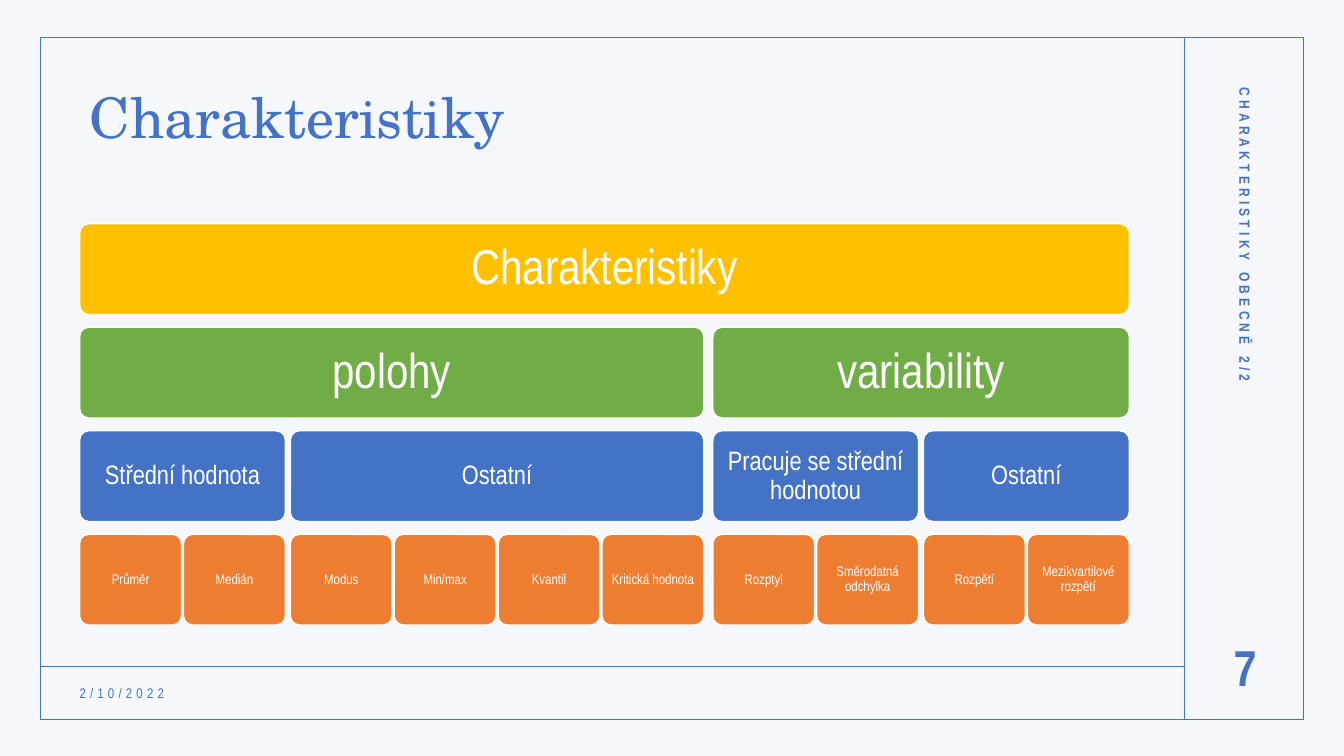
from lxml.etree import SubElement
from pptx import Presentation
from pptx.dml.color import RGBColor
from pptx.enum.shapes import MSO_CONNECTOR as Connector, MSO_SHAPE as Shape
from pptx.enum.text import MSO_ANCHOR as Anchor, PP_ALIGN as Align
from pptx.oxml.ns import qn
from pptx.util import Inches, Pt

BLUE = "4472C4"
WHITE = "FFFFFF"
BODY_FONT = "Arial Narrow"
TITLE_FONT = "TeX Gyre Schola"

LEVELS = [
    {"fill": "FFC000", "size": 35, "inset": 0.15, "gap": 0.09},
    {"fill": "70AD47", "size": 35, "inset": 0.15, "gap": 0.05},
    {"fill": BLUE, "size": 19, "inset": 0.08, "gap": 0.02},
    {"fill": "ED7D31", "size": 10, "inset": 0.04, "gap": 0},
]
TILE_HEIGHT = 0.9
ROW_STEP = 1.027

TREE = ("Charakteristiky", [
    ("polohy", [
        ("Střední hodnota", [("Průměr", []), ("Medián", [])]),
        ("Ostatní", [("Modus", []), ("Min/max", []), ("Kvantil", []),
                     ("Kritická hodnota", [])]),
    ]),
    ("variability", [
        ("Pracuje se střední hodnotou", [("Rozptyl", []), ("Směrodatná odchylka", [])]),
        ("Ostatní", [("Rozpětí", []), ("Mezikvartilové rozpětí", [])]),
    ]),
])


def color(value):
    """Return the colour for a hex string."""
    return RGBColor.from_string(value)


def write(shape, text, size, ink=BLUE, font=BODY_FONT, bold=False, align=Align.LEFT,
          tracking=0):
    """Write one formatted run into a shape, centred vertically."""
    frame = shape.text_frame
    frame.word_wrap = True
    frame.vertical_anchor = Anchor.MIDDLE
    paragraph = frame.paragraphs[0]
    paragraph.alignment = align
    run = paragraph.add_run()
    run.text = text
    run.font.name = font
    run.font.size = Pt(size)
    run.font.bold = bold
    run.font.color.rgb = color(ink)
    if tracking:
        run.font._element.set("spc", str(tracking * 100))
    return paragraph


def add_box(slide, kind, box, fill=None, line=None):
    """Add a shadowless preset shape with an optional fill and outline."""
    shape = slide.shapes.add_shape(kind, *map(Inches, box))
    shape.shadow.inherit = False
    if fill:
        shape.fill.solid()
        shape.fill.fore_color.rgb = color(fill)
    else:
        shape.fill.background()
    if line:
        shape.line.color.rgb = color(line)
        shape.line.width = Pt(1)
    else:
        shape.line.fill.background()
    return shape


def add_rule(slide, start, end):
    """Add a thin blue line between two points."""
    rule = slide.shapes.add_connector(Connector.STRAIGHT, *map(Inches, start + end))
    rule.line.color.rgb = color(BLUE)
    rule.line.width = Pt(1)
    SubElement(rule._element.spPr, qn("a:effectLst"))


def add_frame(slide, box):
    """Draw the tinted backdrop, the border and its dividing lines."""
    left, top, width, height = box
    backdrop = add_box(slide, Shape.RECTANGLE, (0, 0, 13.33, 7.5), fill=BLUE)
    tint = backdrop._element.spPr.find(qn("a:solidFill"))[0]
    SubElement(tint, qn("a:alpha")).set("val", "5000")
    add_box(slide, Shape.RECTANGLE, box, line=BLUE)
    divider = left + width - 1.18
    add_rule(slide, (divider, top), (divider, top + height))
    add_rule(slide, (left, top + height - 0.53), (divider, top + height - 0.53))


def add_title(slide, box, text):
    """Place the title placeholder in front of the frame."""
    title = slide.shapes.title
    title.left, title.top, title.width, title.height = map(Inches, box)
    write(title, text, 40, font=TITLE_FONT).line_spacing = 0.9
    title._element.getparent().append(title._element)


def add_label(slide, box, text, size, rotation=0, **style):
    """Add a text box for the footer or side strip."""
    label = slide.shapes.add_textbox(*map(Inches, box))
    label.rotation = rotation
    write(label, text, size, **style)


def add_tile(slide, box, text, level):
    """Add one rounded tile in the style of its level."""
    tile = add_box(slide, Shape.ROUNDED_RECTANGLE, box, fill=level["fill"], line=WHITE)
    tile.adjustments[0] = 0.1
    frame = tile.text_frame
    inset = Inches(level["inset"])
    frame.margin_left = frame.margin_right = inset
    frame.margin_top = frame.margin_bottom = inset
    paragraph = write(tile, text, level["size"], ink=WHITE, align=Align.CENTER)
    paragraph.line_spacing = 0.9


def measure(node, depth=0):
    """Return the leaf count and the total gap width below a node."""
    children = node[1]
    if not children:
        return 1, 0
    sizes = [measure(child, depth + 1) for child in children]
    gaps = sum(gap for _, gap in sizes) + LEVELS[depth]["gap"] * (len(children) - 1)
    return sum(count for count, _ in sizes), gaps


def add_branch(slide, node, left, top, leaf_width, depth=0):
    """Draw a node above its children and return its width."""
    text, children = node
    leaves, gaps = measure(node, depth)
    width = leaves * leaf_width + gaps
    add_tile(slide, (left, top, width, TILE_HEIGHT), text, LEVELS[depth])
    child_left = left
    for child in children:
        child_width = add_branch(slide, child, child_left, top + ROW_STEP, leaf_width,
                                 depth + 1)
        child_left += child_width + LEVELS[depth]["gap"]
    return width


def add_hierarchy(slide, left, top, width):
    """Fit the whole tree to the given width."""
    leaves, gaps = measure(TREE)
    add_branch(slide, TREE, left, top, (width - gaps) / leaves)


def main():
    """Build and save the presentation."""
    presentation = Presentation()
    presentation.slide_width = Inches(13.33)
    presentation.slide_height = Inches(7.5)
    slide = presentation.slides.add_slide(presentation.slide_layouts[5])
    add_frame(slide, (0.4, 0.37, 12.53, 6.77))
    add_label(slide, (0.69, 6.72, 3.45, 0.31), "2/10/2022", 10, tracking=3)
    add_label(slide, (10.1, 2.82, 4.5, 0.4), "CHARAKTERISTIKY OBECNĚ 2/2", 10.5,
              rotation=90, bold=True, tracking=3)
    add_label(slide, (11.83, 6.2, 1.04, 0.83), "7", 36, bold=True, align=Align.CENTER)
    add_title(slide, (0.79, 0.51, 10.42, 1.36), "Charakteristiky")
    add_hierarchy(slide, 0.79, 2.22, 10.41)
    presentation.save("out.pptx")


if __name__ == "__main__":
    main()
